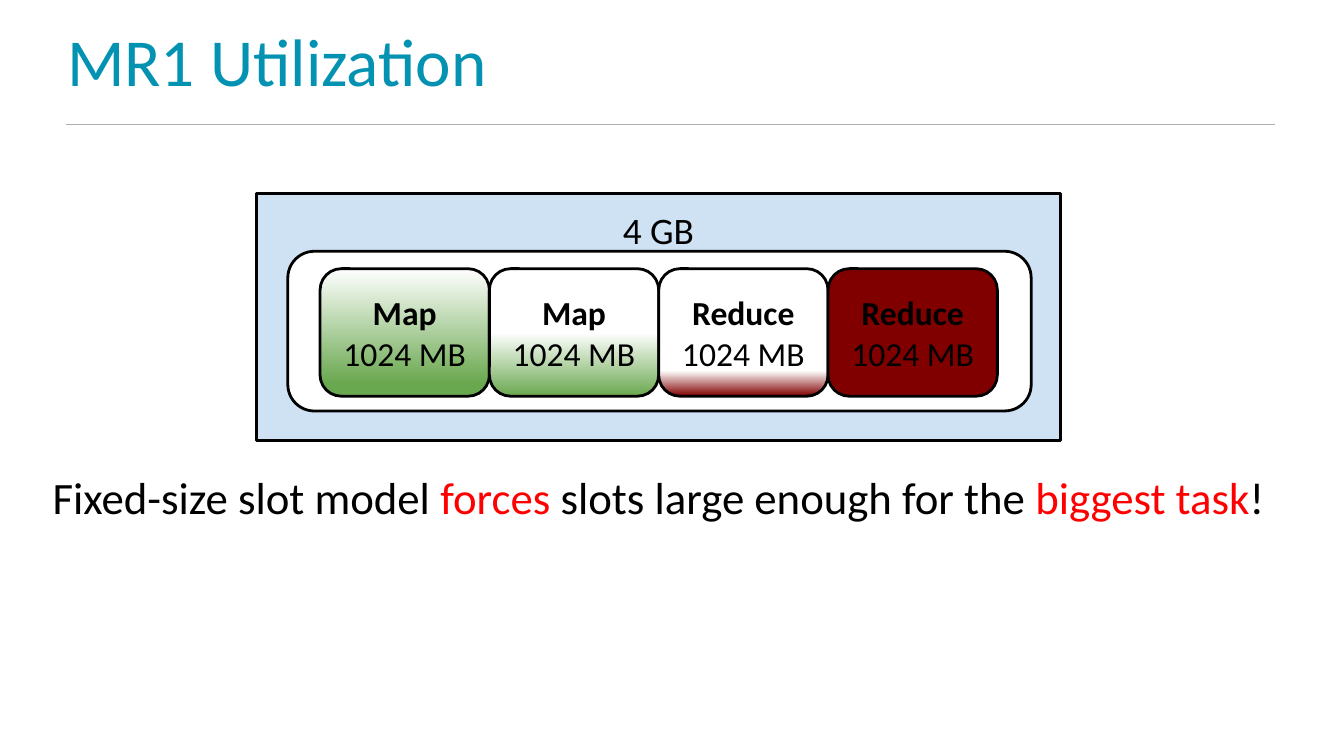
from dataclasses import dataclass

from lxml.etree import SubElement
from pptx import Presentation
from pptx.dml.color import RGBColor
from pptx.enum.shapes import MSO_CONNECTOR, MSO_SHAPE
from pptx.enum.text import MSO_ANCHOR, PP_ALIGN
from pptx.oxml.ns import qn
from pptx.shapes.autoshape import Shape
from pptx.slide import Slide
from pptx.text.text import Font, TextFrame
from pptx.util import Cm, Pt

COLORS = {
    "title": "0392B2",
    "rule": "AEAEAE",
    "text": "000000",
    "accent": "FF0000",
    "host": "CFE2F3",
    "empty": "FFFFFF",
    "map": "6AA84F",
    "reduce": "800000",
}


@dataclass
class Box:
    left: float
    top: float
    width: float
    height: float

    def lengths(self) -> tuple[Cm, Cm, Cm, Cm]:
        return Cm(self.left), Cm(self.top), Cm(self.width), Cm(self.height)


@dataclass
class Slot:
    task: str
    color: str
    fade: tuple[float, float] | None  # where the color ends and white begins


SLOTS = [
    Slot("Map", "map", (0.1, 1)),
    Slot("Map", "map", (0, 0.5)),
    Slot("Reduce", "reduce", (0, 0.2)),
    Slot("Reduce", "reduce", None),
]
FIRST_SLOT = Box(6.05, 5.08, 3.2, 2.41)


def rgb(name: str) -> RGBColor:
    return RGBColor.from_string(COLORS[name])


def style_font(font: Font, size: float, color: str = "text", bold: bool = False) -> None:
    font.name = "Calibri"
    font.size = Pt(size)
    font.bold = bold
    font.color.rgb = rgb(color)


def add_box(slide: Slide, preset: MSO_SHAPE, box: Box, color: str) -> Shape:
    shape = slide.shapes.add_shape(preset, *box.lengths())
    shape.shadow.inherit = False
    shape.fill.solid()
    shape.fill.fore_color.rgb = rgb(color)
    shape.line.color.rgb = rgb("text")
    shape.line.width = Pt(1.5)
    frame = shape.text_frame
    frame.margin_left = frame.margin_right = Cm(0.25)
    frame.margin_top = frame.margin_bottom = Cm(0.25)
    return shape


def add_text_box(slide: Slide, box: Box) -> TextFrame:
    frame = slide.shapes.add_textbox(*box.lengths()).text_frame
    frame.word_wrap = True
    return frame


def add_slot(slide: Slide, box: Box, slot: Slot) -> None:
    shape = add_box(slide, MSO_SHAPE.ROUNDED_RECTANGLE, box, slot.color)
    if slot.fade:
        shape.fill.gradient()
        shape.fill.gradient_angle = 90
        stops = zip(shape.fill.gradient_stops, slot.fade, (slot.color, "empty"))
        for stop, position, color in stops:
            stop.position = position
            stop.color.rgb = rgb(color)
    frame = shape.text_frame
    frame.vertical_anchor = MSO_ANCHOR.MIDDLE
    frame.text = f"{slot.task}\n1024 MB"
    for paragraph, bold in zip(frame.paragraphs, (True, False)):
        paragraph.alignment = PP_ALIGN.CENTER
        style_font(paragraph.font, 18, bold=bold)


def add_header(slide: Slide) -> None:
    rule = slide.shapes.add_connector(
        MSO_CONNECTOR.STRAIGHT, Cm(1.25), Cm(2.36), Cm(24.1), Cm(2.36)
    )
    rule.line.color.rgb = rgb("rule")
    rule.line.width = Pt(0.5)
    SubElement(rule._element.spPr, qn("a:effectLst"))

    frame = add_text_box(slide, Box(1.02, 0.08, 22.86, 2.39))
    frame.vertical_anchor = MSO_ANCHOR.MIDDLE
    title = frame.paragraphs[0]
    title.text = "MR1 Utilization"
    title.line_spacing = 0.8
    style_font(title.font, 36, "title")


def add_host(slide: Slide) -> None:
    host = add_box(slide, MSO_SHAPE.RECTANGLE, Box(4.85, 3.66, 15.19, 4.67), "host")
    host.text_frame.vertical_anchor = MSO_ANCHOR.TOP
    memory = host.text_frame.paragraphs[0]
    memory.text = "4 GB"
    memory.alignment = PP_ALIGN.CENTER
    style_font(memory.font, 20)

    add_box(slide, MSO_SHAPE.ROUNDED_RECTANGLE, Box(5.44, 4.75, 14.05, 3.02), "empty")
    for index, slot in enumerate(SLOTS):
        left = FIRST_SLOT.left + index * FIRST_SLOT.width
        box = Box(left, FIRST_SLOT.top, FIRST_SLOT.width, FIRST_SLOT.height)
        add_slot(slide, box, slot)


def add_conclusion(slide: Slide) -> None:
    conclusion = add_text_box(slide, Box(0.53, 8.76, 23.83, 1.27)).paragraphs[0]
    conclusion.alignment = PP_ALIGN.CENTER
    for text, color in (
        ("Fixed-size slot model ", "text"),
        ("forces", "accent"),
        (" slots large enough for the ", "text"),
        ("biggest task", "accent"),
        ("!", "text"),
    ):
        run = conclusion.add_run()
        run.text = text
        style_font(run.font, 24, color)


def main() -> None:
    presentation = Presentation()
    presentation.slide_width = Cm(25.4)
    presentation.slide_height = Cm(14.29)
    slide = presentation.slides.add_slide(presentation.slide_layouts[6])
    add_header(slide)
    add_host(slide)
    add_conclusion(slide)
    presentation.save("out.pptx")


if __name__ == "__main__":
    main()
